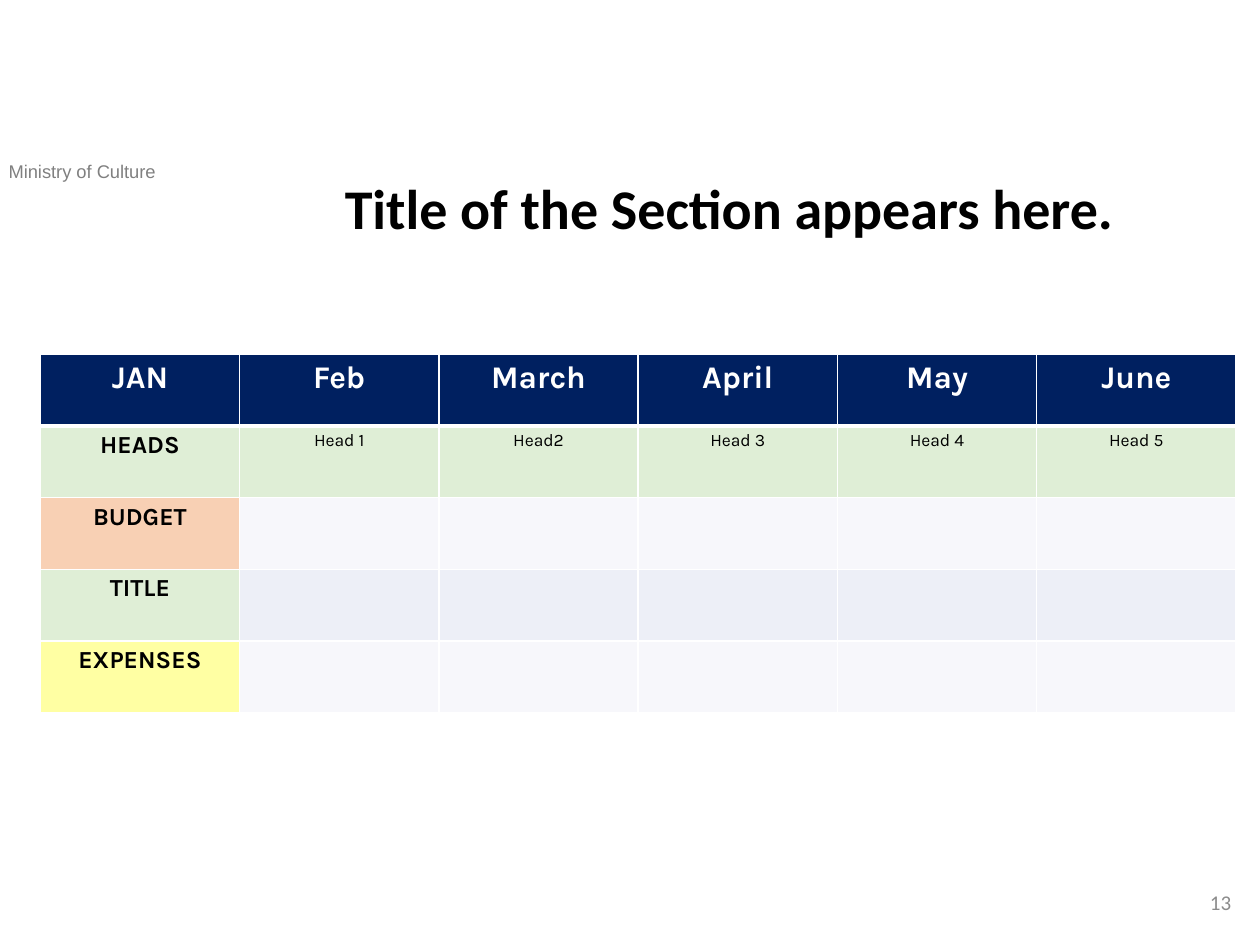
from pptx import Presentation
from pptx.dml.color import RGBColor
from pptx.enum.text import MSO_ANCHOR as Anchor, PP_ALIGN as Align
from pptx.oxml.ns import qn
from pptx.oxml.xmlchemy import OxmlElement as Element
from pptx.util import Inches, Pt

COLORS = {
    "black": "000000", "white": "FFFFFF", "label": "808080", "number": "8C8C8C",
    "navy": "002060", "green": "A9D18E", "orange": "ED7D31", "yellow": "FFFF00",
    "light": "E9EBF5", "dark": "CFD5EA",
}
MONTHS = ["JAN", "Feb", "March", "April", "May", "June"]
HEADS = ["HEADS", "Head 1", "Head2", "Head 3", "Head 4", "Head 5"]
ROWS = [
    (MONTHS, "navy", "navy"),
    (HEADS, "green", "green"),
    (["BUDGET"], "orange", "light"),
    (["TITLE"], "green", "dark"),
    (["EXPENSES"], "yellow", "light"),
]


class SlideBuilder:
    """Holds the text style and the current slide, and adds each kind of element."""

    def __init__(self, slide):
        self.slide = slide
        self.table_font = "Karla"
        self.margins = {"margin_left": 0.07, "margin_right": 0.07,
                        "margin_top": 0.04, "margin_bottom": 0.04}
        self.fill_opacity = 36

    def add_run(self, paragraph, text, color, align=Align.CENTER, **font):
        paragraph.alignment = align
        run = paragraph.add_run()
        run.text = text
        for name, value in font.items():
            setattr(run.font, name, value)
        run.font.color.rgb = RGBColor.from_string(COLORS[color])

    def text(self, box, text, color, align, anchor=Anchor.TOP, spacing=None, **font):
        shape = self.slide.shapes.add_textbox(*map(Inches, box))
        frame = shape.text_frame
        frame.word_wrap = True
        frame.vertical_anchor = anchor
        paragraph = frame.paragraphs[0]
        paragraph.line_spacing = spacing
        self.add_run(paragraph, text, color, align, **font)

    def border(self, cell, side, width):
        line = Element(f"a:ln{side}")
        line.set("w", str(Pt(width)))
        fill = Element("a:solidFill")
        color = Element("a:srgbClr")
        color.set("val", COLORS["white"])
        fill.append(color)
        line.append(fill)
        cell._tc.get_or_add_tcPr().append(line)

    def fill(self, cell, color, opacity):
        cell.fill.solid()
        cell.fill.fore_color.rgb = RGBColor.from_string(COLORS[color])
        if opacity < 100:
            alpha = Element("a:alpha")
            alpha.set("val", str(opacity * 1000))
            properties = cell._tc.get_or_add_tcPr()
            properties.find(f"{qn('a:solidFill')}/{qn('a:srgbClr')}").append(alpha)

    def cell(self, cell, row, column, text, color):
        for name, value in self.margins.items():
            setattr(cell, name, Inches(value))
        widths = {"L": 1, "R": 1, "T": 3 if row == 1 else 1, "B": 3 if row == 0 else 1}
        for side, width in widths.items():
            self.border(cell, side, width)
        self.fill(cell, color, self.fill_opacity if row else 100)
        if text:
            size = 18 if row == 0 else 14 if column == 0 else 10
            self.add_run(cell.text_frame.paragraphs[0], text,
                         "black" if row else "white", name=self.table_font,
                         size=Pt(size), bold=row == 0 or column == 0)

    def table(self, box, rows, column_count):
        shape = self.slide.shapes.add_table(len(rows), column_count, *map(Inches, box))
        table = shape.table
        table.first_row = table.horz_banding = False
        for row, (texts, first_color, color) in enumerate(rows):
            for column in range(column_count):
                text = texts[column] if column < len(texts) else ""
                self.cell(table.cell(row, column), row, column, text,
                          color if column else first_color)


def main():
    presentation = Presentation()
    presentation.slide_width = Inches(10)
    presentation.slide_height = Inches(7.5)
    builder = SlideBuilder(presentation.slides.add_slide(presentation.slide_layouts[6]))
    builder.text((-0.03, 1.22, 2.18, 0.28), "Ministry of Culture", "label",
                 Align.LEFT, name="Arial", size=Pt(10.5))
    builder.table((0.32, 2.81, 9.49, 2.85), ROWS, len(MONTHS))
    builder.text((7.62, 6.96, 2.25, 0.4), "13", "number", Align.RIGHT,
                 Anchor.MIDDLE, name="Calibri", size=Pt(12))
    builder.text((2.56, 1.39, 6.46, 0.79), "Title of the Section appears here.", "black",
                 Align.CENTER, spacing=0.9, name="Calibri", size=Pt(32), bold=True)
    presentation.save("out.pptx")


if __name__ == "__main__":
    main()
